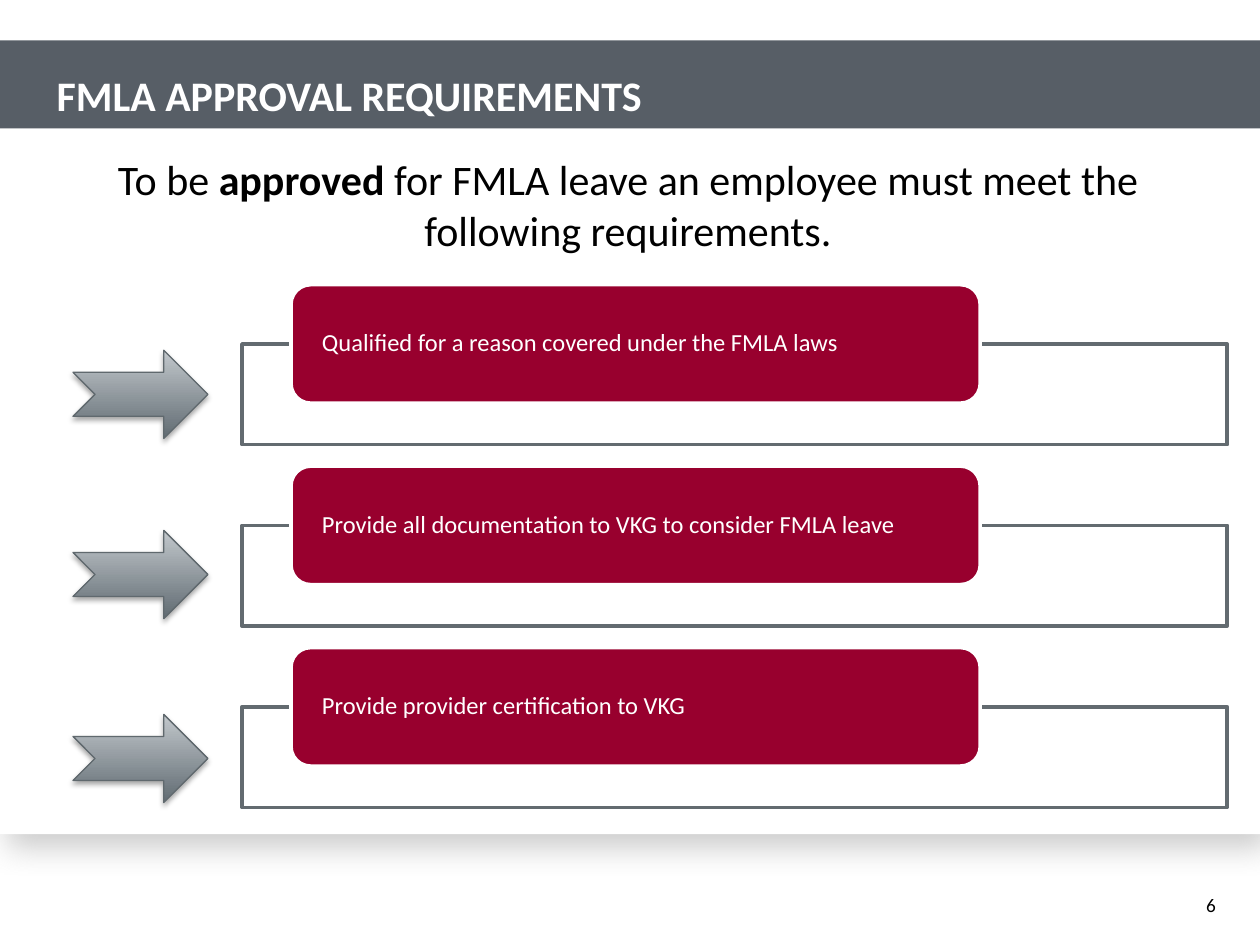
from lxml import etree
from pptx import Presentation
from pptx.dml.color import RGBColor
from pptx.enum.shapes import MSO_SHAPE
from pptx.enum.text import MSO_ANCHOR, MSO_AUTO_SIZE, PP_ALIGN
from pptx.oxml.ns import qn
from pptx.util import Inches, Pt

RECTANGLE = MSO_SHAPE.RECTANGLE
ROUNDED = MSO_SHAPE.ROUNDED_RECTANGLE
ARROW = MSO_SHAPE.NOTCHED_RIGHT_ARROW
LEFT, CENTER, RIGHT = PP_ALIGN.LEFT, PP_ALIGN.CENTER, PP_ALIGN.RIGHT
TOP, MIDDLE, BOTTOM = MSO_ANCHOR.TOP, MSO_ANCHOR.MIDDLE, MSO_ANCHOR.BOTTOM

WHITE = RGBColor(0xFF, 0xFF, 0xFF)
BLACK = RGBColor(0x00, 0x00, 0x00)
SLATE = RGBColor(0x57, 0x5E, 0x66)
FRAME_GRAY = RGBColor(0x63, 0x6B, 0x70)
CRIMSON = RGBColor(0x98, 0x00, 0x2E)
ARROW_LINE = RGBColor(0x60, 0x69, 0x6E)
ARROW_DARK = RGBColor(0x61, 0x6B, 0x72)
ARROW_LIGHT = RGBColor(0xC2, 0xC8, 0xCC)
SHADOW_GRAY = RGBColor(0x80, 0x80, 0x80)

FONT = "Calibri"
WIDTH, HEIGHT = 10, 7.5
BAND_TOP, BAND_HEIGHT = 0.32, 0.7
ROW_TOP, ROW_PITCH = 2.26, 1.44
FRAME_DROP = 0.47  # how far each frame sits below its label's top
ARROW_TOPS = (2.78, 4.21, 5.67)
REQUIREMENTS = (
    "Qualified for a reason covered under the FMLA laws",
    "Provide all documentation to VKG to consider FMLA leave",
    "Provide provider certification to VKG",
)


def add_block(slide, kind, area, fill=None, line=None, line_width=2):
    block = slide.shapes.add_shape(kind, *map(Inches, area))
    block.shadow.inherit = False
    if fill is not None:
        block.fill.solid()
        block.fill.fore_color.rgb = fill
    if line is None:
        block.line.fill.background()
    else:
        block.line.color.rgb = line
        block.line.width = Pt(line_width)
    return block


def add_shadow(block, color, opacity, blur, distance, angle):
    effects = block.element.spPr.find(qn("a:effectLst"))
    shadow = etree.SubElement(
        effects, qn("a:outerShdw"), blurRad=str(Pt(blur)),
        dist=str(Pt(distance)), dir=str(angle * 60000), rotWithShape="0")
    tint = etree.SubElement(shadow, qn("a:srgbClr"), val=str(color))
    etree.SubElement(tint, qn("a:alpha"), val=str(opacity * 1000))


def write(box, spans, size, color, align=LEFT, anchor=TOP,
          margins=(0.1, 0.05, 0.1, 0.05)):
    """Fill a box with one paragraph of (text, bold) spans."""
    frame = box.text_frame
    frame.word_wrap = True
    frame.auto_size = MSO_AUTO_SIZE.NONE
    frame.vertical_anchor = anchor
    (frame.margin_left, frame.margin_top,
     frame.margin_right, frame.margin_bottom) = map(Inches, margins)
    para = frame.paragraphs[0]
    para.alignment = align
    para.font.name, para.font.size = FONT, Pt(size)
    para.font.color.rgb = color
    for text, bold in spans:
        span = para.add_run()
        span.text = text
        span.font.bold = bold
    return para


def add_text(slide, area, spans, size, **layout):
    box = slide.shapes.add_textbox(*map(Inches, area))
    return write(box, spans, size, BLACK, **layout)


def add_background(slide):
    panel_top = BAND_TOP + BAND_HEIGHT
    panel = add_block(slide, RECTANGLE, (0, panel_top, WIDTH, 5.6), WHITE)
    add_shadow(panel, SHADOW_GRAY, 40, 17.5, 9, 60)
    add_block(slide, RECTANGLE, (0, BAND_TOP, WIDTH, BAND_HEIGHT), SLATE)


def set_title(slide, text):
    title = slide.shapes.title
    title.left, title.top, title.width, title.height = map(
        Inches, (0.35, 0.5, 9.3, 0.5))
    para = write(title, [(text, True)], 24, WHITE, anchor=BOTTOM)
    para.line_spacing = Pt(24)
    # Bring the title in front of the band
    title.element.getparent().append(title.element)


def add_requirement(slide, top, text):
    frame = add_block(slide, RECTANGLE, (1.92, top + FRAME_DROP, 7.82, 0.8),
                      WHITE, FRAME_GRAY)
    color = frame.element.spPr.find(qn("a:solidFill"))[0]
    etree.SubElement(color, qn("a:alpha"), val="90000")
    label = add_block(slide, ROUNDED, (2.31, top, 5.47, 0.94), CRIMSON, WHITE)
    para = write(label, [(text, False)], 14, WHITE, anchor=MIDDLE,
                 margins=(0.2, 0, 0.2, 0))
    para.line_spacing = 0.9


def add_arrow(slide, top):
    arrow = add_block(slide, ARROW, (0.58, top, 1.07, 0.7),
                      line=ARROW_LINE, line_width=0.75)
    arrow.fill.gradient()
    arrow.fill.gradient_angle = 90
    for stop, color, place in zip(arrow.fill.gradient_stops,
                                  (ARROW_DARK, ARROW_LIGHT), (0, 1)):
        stop.color.rgb = color
        stop.position = place
    add_shadow(arrow, BLACK, 35, 3.1, 1.8, 90)


def main():
    deck = Presentation()
    deck.slide_width, deck.slide_height = Inches(WIDTH), Inches(HEIGHT)
    slide = deck.slides.add_slide(deck.slide_layouts[5])

    # Backdrop and heading
    add_background(slide)
    set_title(slide, "FMLA APPROVAL REQUIREMENTS")
    add_text(slide, (0.47, 1.17, 9.03, 0.91),
             [("To be ", False), ("approved", True),
              (" for FMLA leave an employee must meet the following "
               "requirements.", False)], 24, align=CENTER)

    # One row per requirement
    for row, (text, arrow_top) in enumerate(zip(REQUIREMENTS, ARROW_TOPS)):
        add_requirement(slide, ROW_TOP + row * ROW_PITCH, text)
        add_arrow(slide, arrow_top)

    # Page number
    add_text(slide, (9.15, 7.07, 0.5, 0.2), [("6", False)], 11,
             align=RIGHT, anchor=BOTTOM, margins=(0.1, 0, 0, 0))

    deck.save("out.pptx")


if __name__ == "__main__":
    main()
